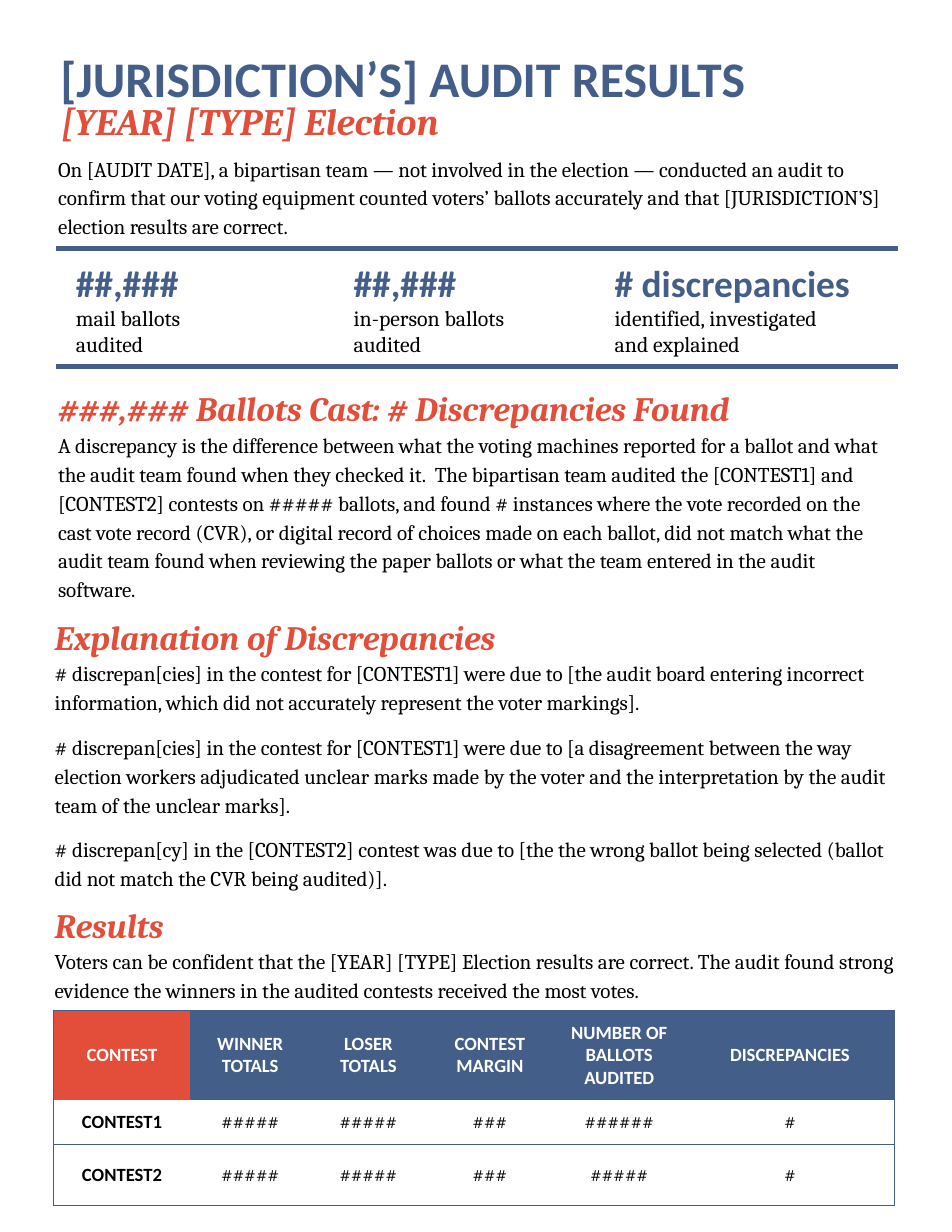
from dataclasses import dataclass

from lxml import etree
from pptx import Presentation
from pptx import util as u
from pptx.dml.color import RGBColor
from pptx.enum import shapes, text
from pptx.oxml import ns

NAVY = RGBColor(0x44, 0x5E, 0x8A)
RED = RGBColor(0xE2, 0x4E, 0x39)
BLACK = RGBColor(0, 0, 0)
WHITE = RGBColor(255, 255, 255)
INSET = u.Inches(0.1)


@dataclass(frozen=True)
class Style:
    size: float
    face: str
    color: RGBColor
    bold: bool = False
    italic: bool = False
    spacing: float = 1.0


@dataclass(frozen=True)
class Para:
    words: str
    style: Style
    before: float = 0
    after: float = 0


@dataclass(frozen=True)
class Block:
    left: float
    top: float
    width: float
    height: float
    paras: tuple[Para, ...]


TITLE = Style(32, "Calibri", NAVY, bold=True)
SUBTITLE = Style(24, "Cambria", RED, bold=True, italic=True)
HEADING = Style(22, "Cambria", RED, bold=True, italic=True)
BODY = Style(13.5, "Cambria", BLACK, spacing=1.15)
FIGURE = Style(24, "Calibri", NAVY, bold=True)
CAPTION = Style(14, "Cambria", BLACK)
COLUMN_HEAD = Style(12, "Calibri", WHITE, bold=True)
ROW_HEAD = Style(12, "Calibri", BLACK, bold=True)
VALUE = Style(12, "Cambria", BLACK)


def statistic(left: float, width: float, figure: str, *captions: str) -> Block:
    paras = (Para(figure, FIGURE), *(Para(line, CAPTION) for line in captions))
    return Block(left, 2.22, width, 1.04, paras)


BLOCKS = (
    Block(0.44, 0.33, 7.75, 0.78, (Para("[JURISDICTION’S] AUDIT RESULTS", TITLE),)),
    Block(0.45, 0.78, 6.53, 0.57, (Para("[YEAR] [TYPE] Election", SUBTITLE),)),
    Block(0.42, 1.26, 7.69, 0.98, (
        Para("On [AUDIT DATE], a bipartisan team — not involved in the election — conducted "
             "an audit to confirm that our voting equipment counted voters’ ballots accurately "
             "and that [JURISDICTION’S] election results are correct.", BODY),
    )),
    statistic(0.58, 2.33, "##,###", "mail ballots", "audited"),
    statistic(3.06, 1.94, "##,###", "in-person ballots", "audited"),
    statistic(5.39, 2.5, "# discrepancies", "identified, investigated", "and explained"),
    Block(0.42, 3.36, 7.69, 2.14, (
        Para("###,### Ballots Cast: # Discrepancies Found", HEADING),
        Para("A discrepancy is the difference between what the voting machines reported for a "
             "ballot and what the audit team found when they checked it.  The bipartisan team "
             "audited the [CONTEST1] and [CONTEST2] contests on ##### ballots, and found # "
             "instances where the vote recorded on the cast vote record (CVR), or digital record "
             "of choices made on each ballot, did not match what the audit team found when "
             "reviewing the paper ballots or what the team entered in the audit software.", BODY),
    )),
    Block(0.39, 5.4, 7.85, 2.64, (
        Para("Explanation of Discrepancies", HEADING),
        Para("# discrepan[cies] in the contest for [CONTEST1] were due to [the audit board "
             "entering incorrect information, which did not accurately represent the voter "
             "markings].", BODY),
        Para("# discrepan[cies] in the contest for [CONTEST1] were due to [a disagreement "
             "between the way election workers adjudicated unclear marks made by the voter and "
             "the interpretation by the audit team of the unclear marks].", BODY, before=10),
        Para("# discrepan[cy] in the [CONTEST2] contest was due to [the the wrong ballot being "
             "selected (ballot did not match the CVR being audited)].", BODY, 10, 10),
    )),
    Block(0.39, 7.97, 7.98, 1.26, (
        Para("Results", HEADING),
        Para("Voters can be confident that the [YEAR] [TYPE] Election results are correct. The "
             "audit found strong evidence the winners in the audited contests received the most "
             "votes.", BODY, after=12),
    )),
)

COLUMN_WIDTHS = (1.22, 1.07, 1.04, 1.13, 1.18, 1.87)
ROW_HEIGHTS = (0.67, 0.36, 0.54)
RESULTS = (
    ("CONTEST", "WINNER TOTALS", "LOSER TOTALS", "CONTEST MARGIN",
     "NUMBER OF BALLOTS AUDITED", "DISCREPANCIES"),
    ("CONTEST1", "#####", "#####", "###", "######", "#"),
    ("CONTEST2", "#####", "#####", "###", "#####", "#"),
)


def write(para, words: str, style: Style) -> None:
    para.text = words
    para.line_spacing = style.spacing
    for span in para.runs:
        span.font.size = u.Pt(style.size)
        span.font.name = style.face
        span.font.color.rgb = style.color
        span.font.bold = style.bold
        span.font.italic = style.italic


def draw_block(page, block: Block) -> None:
    box = page.shapes.add_textbox(u.Inches(block.left), u.Inches(block.top),
                                  u.Inches(block.width), u.Inches(block.height))
    frame = box.text_frame
    frame.word_wrap = True
    frame.margin_left = frame.margin_right = INSET
    frame.margin_top = frame.margin_bottom = INSET
    for index, item in enumerate(block.paras):
        para = frame.add_paragraph() if index else frame.paragraphs[0]
        write(para, item.words, item.style)
        if index:
            para.space_before = u.Pt(item.before)
        para.space_after = u.Pt(item.after)


def draw_rule(page, top: float) -> None:
    rule = page.shapes.add_connector(shapes.MSO_CONNECTOR.STRAIGHT, u.Inches(0.5),
                                     u.Inches(top), u.Inches(8.02), u.Inches(top))
    rule.line.color.rgb = NAVY
    rule.line.width = u.Pt(3)
    etree.SubElement(rule._element.spPr, ns.qn("a:effectLst"))


def set_borders(cell, visible: str) -> None:
    properties = cell._tc.get_or_add_tcPr()
    for side in "LRTB":
        line = etree.SubElement(properties, ns.qn(f"a:ln{side}"), w=str(u.Pt(1)))
        if side in visible:
            fill = etree.SubElement(line, ns.qn("a:solidFill"))
            etree.SubElement(fill, ns.qn("a:srgbClr"), val=str(NAVY))
        else:
            etree.SubElement(line, ns.qn("a:noFill"))


def draw_cell(cell, row: int, column: int, words: str) -> None:
    left = "L" if column == 0 else ""
    right = "R" if column == len(COLUMN_WIDTHS) - 1 else ""
    set_borders(cell, left + right + ("TB" if row != 1 else "B"))
    cell.fill.solid()
    if row == 0:
        cell.fill.fore_color.rgb = NAVY if column else RED
        style = COLUMN_HEAD
    else:
        cell.fill.fore_color.rgb = WHITE
        style = VALUE if column else ROW_HEAD
    cell.margin_left = cell.margin_right = INSET
    cell.margin_top = cell.margin_bottom = INSET
    bottom = row == 1 and column > 0
    cell.vertical_anchor = text.MSO_ANCHOR.BOTTOM if bottom else text.MSO_ANCHOR.MIDDLE
    para = cell.text_frame.paragraphs[0]
    write(para, words, style)
    para.alignment = text.PP_ALIGN.CENTER


def draw_results(page) -> None:
    frame = page.shapes.add_table(len(ROW_HEIGHTS), len(COLUMN_WIDTHS), u.Inches(0.48),
                                  u.Inches(9.02), u.Inches(sum(COLUMN_WIDTHS)),
                                  u.Inches(sum(ROW_HEIGHTS)))
    table = frame.table
    for column, width in zip(table.columns, COLUMN_WIDTHS):
        column.width = u.Inches(width)
    for row, height in zip(table.rows, ROW_HEIGHTS):
        row.height = u.Inches(height)
    for row, entries in enumerate(RESULTS):
        for column, words in enumerate(entries):
            draw_cell(table.cell(row, column), row, column, words)


def main() -> None:
    deck = Presentation()
    deck.slide_width, deck.slide_height = u.Inches(8.5), u.Inches(11)
    page = deck.slides.add_slide(deck.slide_layouts[6])
    for block in BLOCKS:
        draw_block(page, block)
    draw_results(page)
    for top in (2.22, 3.27):
        draw_rule(page, top)
    deck.save("out.pptx")


if __name__ == "__main__":
    main()
